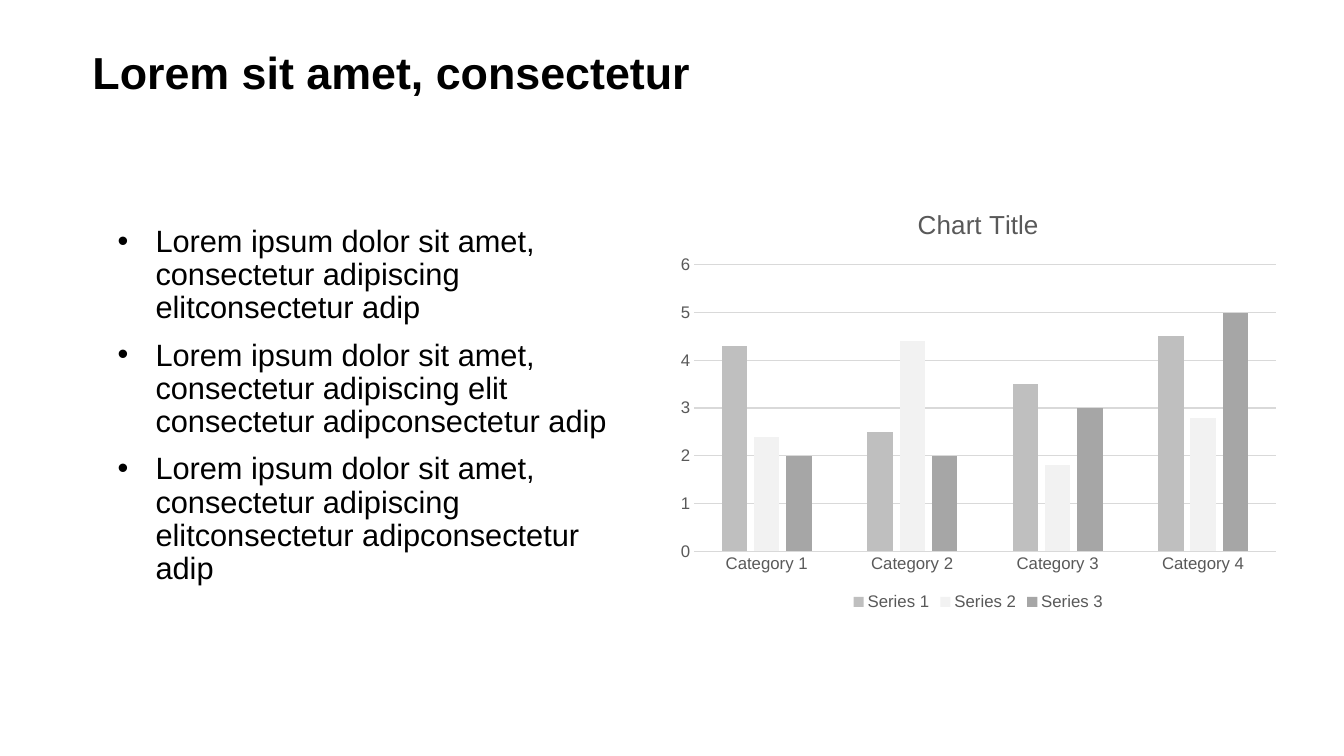
from pptx import Presentation
from pptx.chart.data import CategoryChartData
from pptx.dml.color import RGBColor
from pptx.enum.chart import XL_CHART_TYPE, XL_LEGEND_POSITION, XL_TICK_MARK
from pptx.enum.text import MSO_ANCHOR
from pptx.oxml.ns import qn
from pptx.util import Pt
from lxml import etree

COLUMN = XL_CHART_TYPE.COLUMN_CLUSTERED
BOTTOM = XL_LEGEND_POSITION.BOTTOM
NO_TICK = XL_TICK_MARK.NONE
TOP = MSO_ANCHOR.TOP

BLACK = RGBColor(0x00, 0x00, 0x00)
GREY = RGBColor(0x59, 0x59, 0x59)
RULE = RGBColor(0xD9, 0xD9, 0xD9)
SILVER = RGBColor(0xBF, 0xBF, 0xBF)
PALE = RGBColor(0xF2, 0xF2, 0xF2)
STEEL = RGBColor(0xA6, 0xA6, 0xA6)

HEAD = "Lorem sit amet, consectetur"
POINTS = [
    "Lorem ipsum dolor sit amet, consectetur adipiscing elitconsectetur adip",
    "Lorem ipsum dolor sit amet, consectetur adipiscing elit "
    "consectetur adipconsectetur adip",
    "Lorem ipsum dolor sit amet, consectetur adipiscing "
    "elitconsectetur adipconsectetur adip",
]
GROUPS = [f"Category {n}" for n in range(1, 5)]
SERIES = [
    ("Series 1", (4.3, 2.5, 3.5, 4.5), SILVER),
    ("Series 2", (2.4, 4.4, 1.8, 2.8), PALE),
    ("Series 3", (2, 2, 3, 5), STEEL),
]


class Page:
    face = "Arial"
    indent = Pt(27)

    def __init__(self, slide):
        self.slide = slide

    def style(self, font, size, color, bold=False):
        font.name = self.face
        font.size = Pt(size)
        font.bold = bold
        font.color.rgb = color

    def bullet(self, para):
        props = para._p.get_or_add_pPr()
        props.set("marL", str(self.indent))
        props.set("indent", str(-self.indent))
        etree.SubElement(props, qn("a:buFont")).set("typeface", self.face)
        etree.SubElement(props, qn("a:buChar")).set("char", "•")

    def text(self, box, lines, size, bold=False, bullets=False):
        frame = self.slide.shapes.add_textbox(*map(Pt, box)).text_frame
        frame.word_wrap = True
        frame.vertical_anchor = TOP
        for i, line in enumerate(lines):
            para = frame.add_paragraph() if i else frame.paragraphs[0]
            if bullets:
                self.bullet(para)
            para.line_spacing = 0.9
            if i:
                para.space_before = Pt(10)
            run = para.add_run()
            run.text = line
            self.style(run.font, size, BLACK, bold)

    def rule(self, line):
        line.color.rgb = RULE
        line.width = Pt(0.75)

    def chart(self, box, title, groups, series):
        data = CategoryChartData()
        data.categories = groups
        for name, values, _ in series:
            data.add_series(name, values)
        chart = self.slide.shapes.add_chart(COLUMN, *map(Pt, box), data).chart
        self.style(chart.font, 12, GREY)

        # Title and legend
        chart.has_title = True
        run = chart.chart_title.text_frame.paragraphs[0].add_run()
        run.text = title
        self.style(run.font, 18.6, GREY)
        chart.chart_title.include_in_layout = False
        chart.has_legend = True
        chart.legend.position = BOTTOM
        chart.legend.include_in_layout = False
        self.style(chart.legend.font, 12, GREY)

        # Axes
        for axis in (chart.category_axis, chart.value_axis):
            axis.major_tick_mark = axis.minor_tick_mark = NO_TICK
            self.style(axis.tick_labels.font, 12, GREY)
        self.rule(chart.category_axis.format.line)
        scale = chart.value_axis
        scale.minimum_scale, scale.maximum_scale, scale.major_unit = 0, 6, 1
        scale.format.line.fill.background()
        self.rule(scale.major_gridlines.format.line)

        # Columns
        plot = chart.plots[0]
        plot.vary_by_categories = False
        plot.gap_width = 219
        plot.overlap = -27
        for bars, (_, _, color) in zip(plot.series, series):
            bars.format.fill.solid()
            bars.format.fill.fore_color.rgb = color


def main():
    deck = Presentation()
    deck.slide_width, deck.slide_height = Pt(960), Pt(540)
    page = Page(deck.slides.add_slide(deck.slide_layouts[6]))

    # Heading, points on the left, chart on the right
    page.text((59, 33, 861, 105), [HEAD], 32, bold=True)
    page.text((77, 157.7, 375.8, 303), POINTS, 22, bullets=True)
    page.chart((477.4, 134.6, 442.8, 304.6), "Chart Title", GROUPS, SERIES)

    deck.save("out.pptx")


if __name__ == "__main__":
    main()
